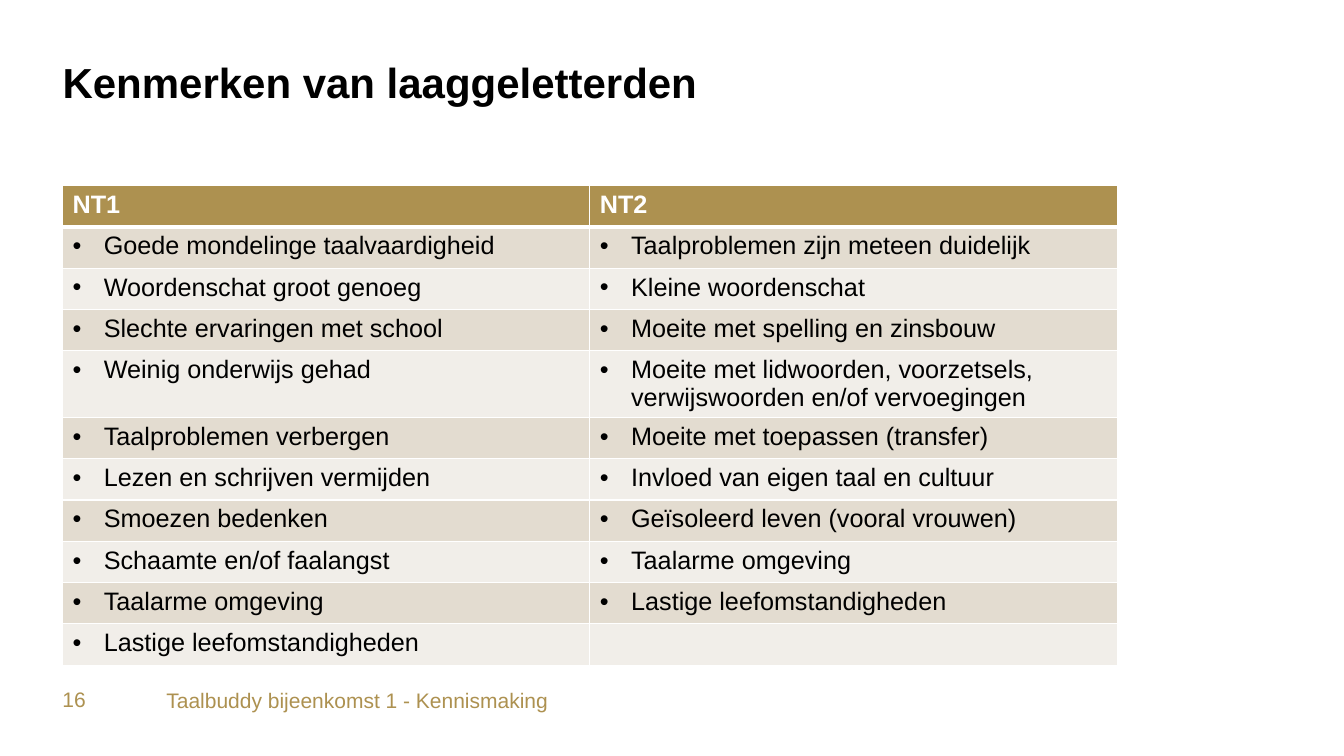
from itertools import zip_longest

from lxml import etree
from pptx import Presentation
from pptx.dml.color import RGBColor
from pptx.enum.text import MSO_ANCHOR, PP_ALIGN
from pptx.oxml.ns import qn
from pptx.util import Emu, Inches, Pt

TOP = MSO_ANCHOR.TOP
LEFT = PP_ALIGN.LEFT
TITLE_ONLY = 5

BLACK = RGBColor(0x00, 0x00, 0x00)
WHITE = RGBColor(0xFF, 0xFF, 0xFF)
GOLD = RGBColor(0xAD, 0x91, 0x50)
SAND = RGBColor(0xE3, 0xDC, 0xD0)
PALE_SAND = RGBColor(0xF1, 0xEE, 0xE9)

FONT = "Arial"
MARGIN = 0.62
ROW_HEIGHT = 0.41
BULLET_INDENT = Inches(0.31)

TRAITS = {
    "NT1": [
        "Goede mondelinge taalvaardigheid",
        "Woordenschat groot genoeg",
        "Slechte ervaringen met school",
        "Weinig onderwijs gehad",
        "Taalproblemen verbergen",
        "Lezen en schrijven vermijden",
        "Smoezen bedenken",
        "Schaamte en/of faalangst",
        "Taalarme omgeving",
        "Lastige leefomstandigheden",
    ],
    "NT2": [
        "Taalproblemen zijn meteen duidelijk",
        "Kleine woordenschat",
        "Moeite met spelling en zinsbouw",
        "Moeite met lidwoorden, voorzetsels, verwijswoorden en/of vervoegingen",
        "Moeite met toepassen (transfer)",
        "Invloed van eigen taal en cultuur",
        "Geïsoleerd leven (vooral vrouwen)",
        "Taalarme omgeving",
        "Lastige leefomstandigheden",
    ],
}


def set_font(paragraph, size, color, bold=False):
    font = paragraph.font
    font.name, font.size, font.bold = FONT, Pt(size), bold
    font.color.rgb = color


def fill_frame(frame, text, size, color, bold=False):
    frame.margin_left = frame.margin_top = 0
    frame.margin_right = frame.margin_bottom = 0
    frame.word_wrap = True
    frame.vertical_anchor = TOP
    frame.text = text
    paragraph = frame.paragraphs[0]
    paragraph.alignment = LEFT
    set_font(paragraph, size, color, bold)
    return paragraph


def add_bullet(paragraph):
    properties = paragraph._p.get_or_add_pPr()
    properties.set("marL", str(BULLET_INDENT))
    properties.set("indent", str(-BULLET_INDENT))
    etree.SubElement(properties, qn("a:buFont")).set("typeface", FONT)
    etree.SubElement(properties, qn("a:buChar")).set("char", "•")


def set_borders(cell, widths):
    properties = cell._tc.get_or_add_tcPr()
    for position, (side, width) in enumerate(zip("LRTB", widths)):
        border = etree.Element(qn(f"a:ln{side}"), w=str(Pt(width)))
        fill = etree.SubElement(border, qn("a:solidFill"))
        etree.SubElement(fill, qn("a:srgbClr")).set("val", str(WHITE))
        properties.insert(position, border)


def style_cell(cell, text, row):
    cell.fill.solid()
    if row == 0:
        cell.fill.fore_color.rgb = GOLD
    else:
        cell.fill.fore_color.rgb = SAND if row % 2 else PALE_SAND
    set_borders(cell, (1, 1, 3 if row == 1 else 1, 3 if row == 0 else 1))
    cell.text = text
    paragraph = cell.text_frame.paragraphs[0]
    if row and text:
        add_bullet(paragraph)
    set_font(paragraph, 18, BLACK if row else WHITE, bold=row == 0)


def place_title(slide, left, top, width, height):
    title = slide.shapes.title
    title.left, title.top = Inches(left), Inches(top)
    title.width, title.height = Inches(width), Inches(height)
    heading = fill_frame(title.text_frame, "Kenmerken van laaggeletterden", 30, BLACK, True)
    heading.line_spacing = 0.9


def add_traits_table(slide, left, top, width):
    rows = [tuple(TRAITS), *zip_longest(*TRAITS.values(), fillvalue="")]
    table = slide.shapes.add_table(
        len(rows), len(TRAITS), Inches(left), Inches(top),
        Inches(width), Inches(ROW_HEIGHT * len(rows)),
    ).table
    for column in table.columns:
        column.width = Emu(Inches(width) // len(TRAITS))
    for row, texts in enumerate(rows):
        table.rows[row].height = Inches(ROW_HEIGHT)
        for column, text in enumerate(texts):
            style_cell(table.cell(row, column), text, row)


def add_footer(slide, left, top, width, height):
    number_width, text_offset = 0.84, 1.03
    parts = (
        ("Taalbuddy bijeenkomst 1 - Kennismaking", left + text_offset, top + 0.01, width - text_offset),
        ("16", left, top, number_width),
    )
    for text, part_left, part_top, part_width in parts:
        part = slide.shapes.add_textbox(
            Inches(part_left), Inches(part_top), Inches(part_width), Inches(height)
        )
        fill_frame(part.text_frame, text, 15, GOLD)


def main():
    deck = Presentation()
    deck.slide_width, deck.slide_height = Inches(13.33), Inches(7.5)
    slide = deck.slides.add_slide(deck.slide_layouts[TITLE_ONLY])
    place_title(slide, MARGIN, MARGIN, 12.06, 1.31)
    add_traits_table(slide, MARGIN, 1.84, 10.46)
    add_footer(slide, MARGIN, 6.81, 11.81, 0.33)
    deck.save("out.pptx")


if __name__ == "__main__":
    main()
